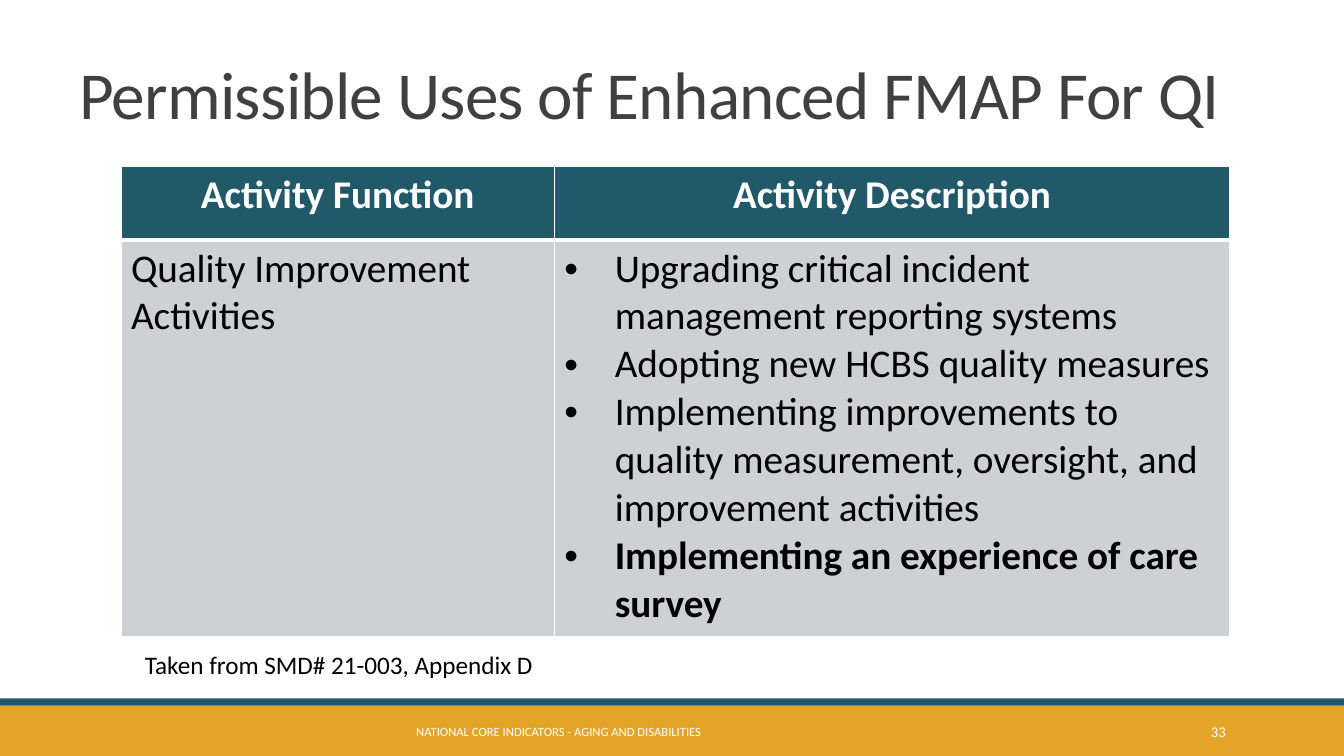
from lxml.etree import SubElement
from pptx import Presentation
from pptx.dml.color import RGBColor
from pptx.enum.shapes import MSO_SHAPE
from pptx.enum.text import MSO_ANCHOR, PP_ALIGN
from pptx.oxml.ns import qn
from pptx.util import Cm, Pt

TEAL = RGBColor(0x21, 0x59, 0x68)
GOLD = RGBColor(0xE4, 0xA4, 0x26)
PALE_GRAY = RGBColor(0xCD, 0xD1, 0xD4)
DARK_GRAY = RGBColor(0x40, 0x40, 0x40)
WHITE = RGBColor(0xFF, 0xFF, 0xFF)
BLACK = RGBColor(0x00, 0x00, 0x00)

HEADINGS = ["Activity Function", "Activity Description"]
FUNCTION = "Quality Improvement Activities"
DESCRIPTIONS = [
    "Upgrading critical incident management reporting systems",
    "Adopting new HCBS quality measures",
    "Implementing improvements to quality measurement, oversight, and improvement activities",
    "Implementing an experience of care survey",
]


class SlideBuilder:
    """Holds the slide and its text style, and adds each kind of element."""

    font_name = "Calibri"
    table_size = 28
    bullet_indent = Cm(1.27)

    def __init__(self, slide):
        self.slide = slide

    def style(self, para, size, color, bold=False, align=PP_ALIGN.LEFT):
        para.alignment = align
        para.font.name = self.font_name
        para.font.size = Pt(size)
        para.font.bold = bold
        para.font.color.rgb = color

    def bar(self, top, height, color):
        bar = self.slide.shapes.add_shape(
            MSO_SHAPE.RECTANGLE, 0, Cm(top), Cm(33.87), Cm(height))
        bar.shadow.inherit = False
        bar.fill.solid()
        bar.fill.fore_color.rgb = color
        bar.line.fill.background()

    def text(self, words, place, size, color, anchor=MSO_ANCHOR.MIDDLE,
             align=PP_ALIGN.LEFT, wrap=True):
        box = self.slide.shapes.add_textbox(*map(Cm, place))
        frame = box.text_frame
        frame.word_wrap = wrap
        frame.vertical_anchor = anchor
        para = frame.paragraphs[0]
        para.text = words
        self.style(para, size, color, align=align)
        return para

    def title(self, words, place):
        para = self.text(words, place, 48, DARK_GRAY, MSO_ANCHOR.BOTTOM)
        para.line_spacing = 0.85
        para.runs[0]._r.get_or_add_rPr().set("spc", "-50")

    def table(self, place, widths, heights):
        frame = self.slide.shapes.add_table(
            len(heights), len(widths), *map(Cm, place))
        table = frame.table
        table.horz_banding = False
        for column, width in zip(table.columns, widths):
            column.width = Cm(width)
        for row, height in zip(table.rows, heights):
            row.height = Cm(height)
        return table

    def cell(self, cell, lines, fill, color, borders, bold_lines=(),
             align=PP_ALIGN.LEFT, bulleted=False):
        properties = cell._tc.get_or_add_tcPr()
        for side, width in zip("LRTB", borders):
            line = SubElement(properties, qn(f"a:ln{side}"), w=str(Pt(width)))
            solid = SubElement(line, qn("a:solidFill"))
            SubElement(solid, qn("a:srgbClr"), val=str(WHITE))
        cell.fill.solid()
        cell.fill.fore_color.rgb = fill
        cell.text = "\n".join(lines)
        for para, words in zip(cell.text_frame.paragraphs, lines):
            if bulleted:
                self.bullet(para)
            self.style(para, self.table_size, color, words in bold_lines, align)

    def bullet(self, para):
        properties = para._p.get_or_add_pPr()
        properties.set("marL", str(self.bullet_indent))
        properties.set("indent", str(-self.bullet_indent))
        SubElement(properties, qn("a:buFont"), typeface="Arial")
        SubElement(properties, qn("a:buChar"), char="•")


def main():
    deck = Presentation()
    deck.slide_width = Cm(33.87)
    deck.slide_height = Cm(19.05)
    page = SlideBuilder(deck.slides.add_slide(deck.slide_layouts[6]))

    page.bar(17.78, 1.27, GOLD)
    page.bar(17.6, 0.18, TEAL)
    page.title("Permissible Uses of Enhanced FMAP For QI", (1.75, 0.79, 31.5, 2.69))
    page.text("NATIONAL CORE INDICATORS - AGING AND DISABILITIES",
              (10.24, 17.93, 13.39, 1.02), 9, WHITE)
    page.text("33", (27.51, 17.93, 3.63, 1.02), 10.5, WHITE, align=PP_ALIGN.RIGHT)

    table = page.table((3.05, 4.19, 27.94, 11.86), (10.92, 17.02), (1.85, 10.01))
    for column, heading in enumerate(HEADINGS):
        page.cell(table.cell(0, column), [heading], TEAL, WHITE, (1, 1, 1, 3),
                  bold_lines=HEADINGS, align=PP_ALIGN.CENTER)
    body_borders = (1, 1, 3, 1)
    page.cell(table.cell(1, 0), [FUNCTION], PALE_GRAY, BLACK, body_borders)
    page.cell(table.cell(1, 1), DESCRIPTIONS, PALE_GRAY, BLACK, body_borders,
              bold_lines=DESCRIPTIONS[-1:], bulleted=True)

    page.text("Taken from SMD# 21-003, Appendix D", (3.4, 16.23, 10.97, 1.02),
              18, BLACK, MSO_ANCHOR.TOP, wrap=False)
    deck.save("out.pptx")


if __name__ == "__main__":
    main()
